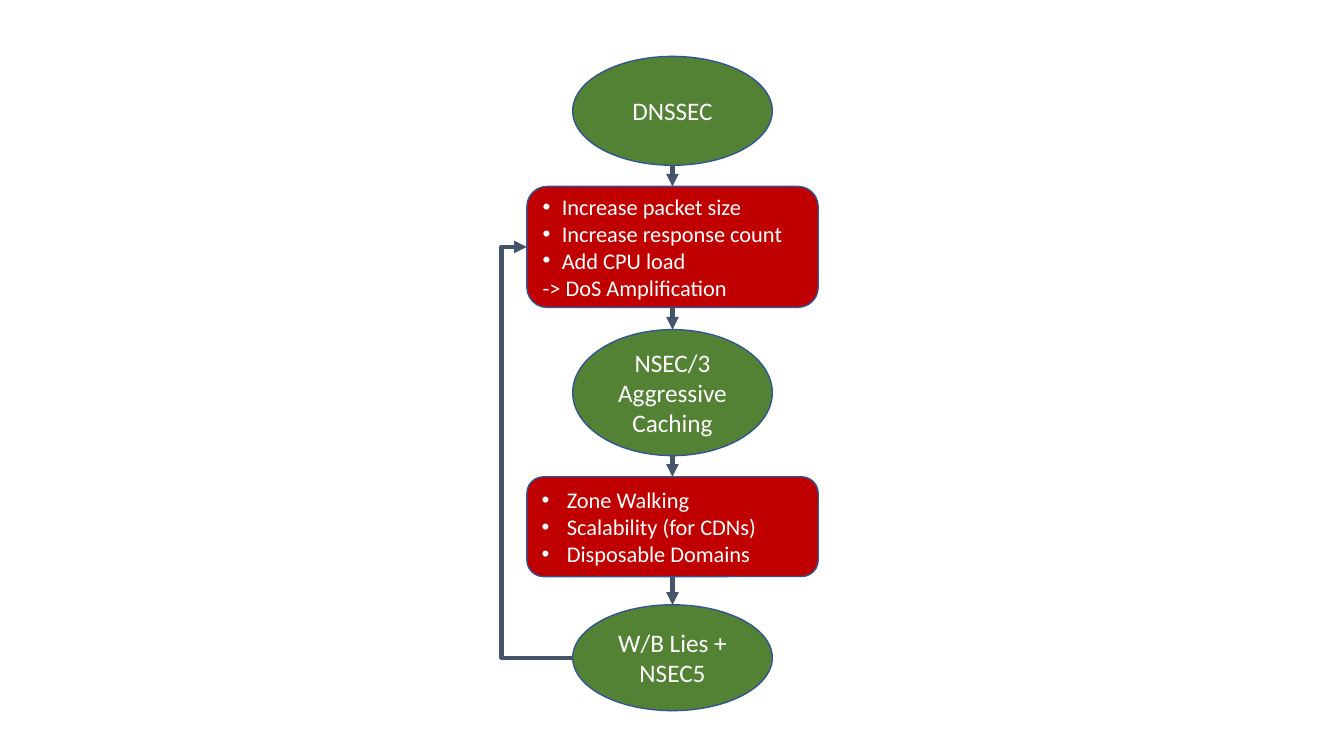
from lxml import etree
from pptx import Presentation
from pptx.dml.color import RGBColor
from pptx.enum.shapes import MSO_CONNECTOR, MSO_SHAPE
from pptx.enum.text import MSO_ANCHOR, PP_ALIGN
from pptx.oxml.ns import qn
from pptx.util import Inches, Pt

OVAL, ROUNDED = MSO_SHAPE.OVAL, MSO_SHAPE.ROUNDED_RECTANGLE
STRAIGHT, ELBOW = MSO_CONNECTOR.STRAIGHT, MSO_CONNECTOR.ELBOW
MIDDLE, LEFT, CENTER = MSO_ANCHOR.MIDDLE, PP_ALIGN.LEFT, PP_ALIGN.CENTER
TOP_SITE, LEFT_SITE, BOTTOM_SITE = 0, 1, 2

GREEN = RGBColor(0x54, 0x82, 0x35)
RED = RGBColor(0xC0, 0x00, 0x00)
OUTLINE = RGBColor(0x32, 0x54, 0x91)
SLATE = RGBColor(0x44, 0x54, 0x6A)
WHITE = RGBColor(0xFF, 0xFF, 0xFF)

AXIS = 6.67
MEASURE = {"kind": OVAL, "width": 1.98, "fill": GREEN, "size": 18, "align": CENTER}
PROBLEM = {"kind": ROUNDED, "width": 2.89, "fill": RED, "size": 16, "align": LEFT}

# style, top, height, bullet indent, bulleted lines, plain lines
STEPS = [
    (MEASURE, 0.56, 1.08, 0, [], ["DNSSEC"]),
    (PROBLEM, 1.85, 1.2, 0.19,
     ["Increase packet size", "Increase response count", "Add CPU load"],
     ["-> DoS Amplification"]),
    (MEASURE, 3.27, 1.25, 0, [], ["NSEC/3\nAggressive Caching"]),
    (PROBLEM, 4.73, 0.99, 0.25,
     ["Zone Walking", "Scalability (for CDNs)", "Disposable Domains"], []),
    (MEASURE, 6, 1.05, 0, [], ["W/B Lies + NSEC5"]),
]


def add_bullet(paragraph, indent):
    properties = paragraph._p.get_or_add_pPr()
    properties.set("marL", str(Inches(indent)))
    properties.set("indent", str(-Inches(indent)))
    etree.SubElement(properties, qn("a:buFont")).set("typeface", "Arial")
    etree.SubElement(properties, qn("a:buChar")).set("char", "•")


def add_step(slide, style, top, height, indent, bullets, plain):
    step = slide.shapes.add_shape(
        style["kind"], Inches(AXIS - style["width"] / 2), Inches(top),
        Inches(style["width"]), Inches(height))
    step.shadow.inherit = False
    step.fill.solid()
    step.fill.fore_color.rgb = style["fill"]
    step.line.color.rgb = OUTLINE
    step.line.width = Pt(1)

    frame = step.text_frame
    frame.word_wrap = True
    frame.vertical_anchor = MIDDLE
    font_format = {"name": "Calibri", "size": Pt(style["size"])}
    for index, line in enumerate(bullets + plain):
        paragraph = frame.add_paragraph() if index else frame.paragraphs[0]
        paragraph.text = line
        paragraph.alignment = style["align"]
        if index < len(bullets):
            add_bullet(paragraph, indent)
        for run in paragraph.runs:
            for name, value in font_format.items():
                setattr(run.font, name, value)
            run.font.color.rgb = WHITE
    return step


def add_arrow(slide, kind, start, end):
    arrow = slide.shapes.add_connector(kind, *start, *end)
    arrow.line.color.rgb = SLATE
    arrow.line.width = Pt(3)
    etree.SubElement(arrow.line._get_or_add_ln(), qn("a:tailEnd")).set("type", "triangle")
    etree.SubElement(arrow._element.spPr, qn("a:effectLst"))
    return arrow


def add_down_arrow(slide, upper, lower):
    center = Inches(AXIS)
    arrow = add_arrow(slide, STRAIGHT, (center, upper.top + upper.height), (center, lower.top))
    if upper.auto_shape_type == ROUNDED:
        arrow.begin_connect(upper, BOTTOM_SITE)
    arrow.end_connect(lower, TOP_SITE)


def add_feedback_arrow(slide, source, target, bend):
    """Run from the left of source to the left of target, bending at a share of the width."""
    arrow = add_arrow(slide, ELBOW,
                      (source.left, source.top + source.height // 2),
                      (target.left, target.top + target.height // 2))
    arrow.end_connect(target, LEFT_SITE)
    geometry = arrow._element.spPr.find(qn("a:prstGeom"))
    guides = geometry.find(qn("a:avLst"))
    if guides is None:
        guides = etree.SubElement(geometry, qn("a:avLst"))
    guide = etree.SubElement(guides, qn("a:gd"))
    guide.set("name", "adj1")
    guide.set("fmla", f"val {round(bend * 100000)}")


def main():
    presentation = Presentation()
    presentation.slide_width = Inches(13.33)
    presentation.slide_height = Inches(7.5)
    blank_layout = presentation.slide_layouts[6]
    slide = presentation.slides.add_slide(blank_layout)

    steps = [add_step(slide, *step) for step in STEPS]
    for upper, lower in zip(steps, steps[1:]):
        add_down_arrow(slide, upper, lower)
    add_feedback_arrow(slide, steps[-1], steps[1], bend=1.55)

    presentation.save("out.pptx")


if __name__ == "__main__":
    main()
